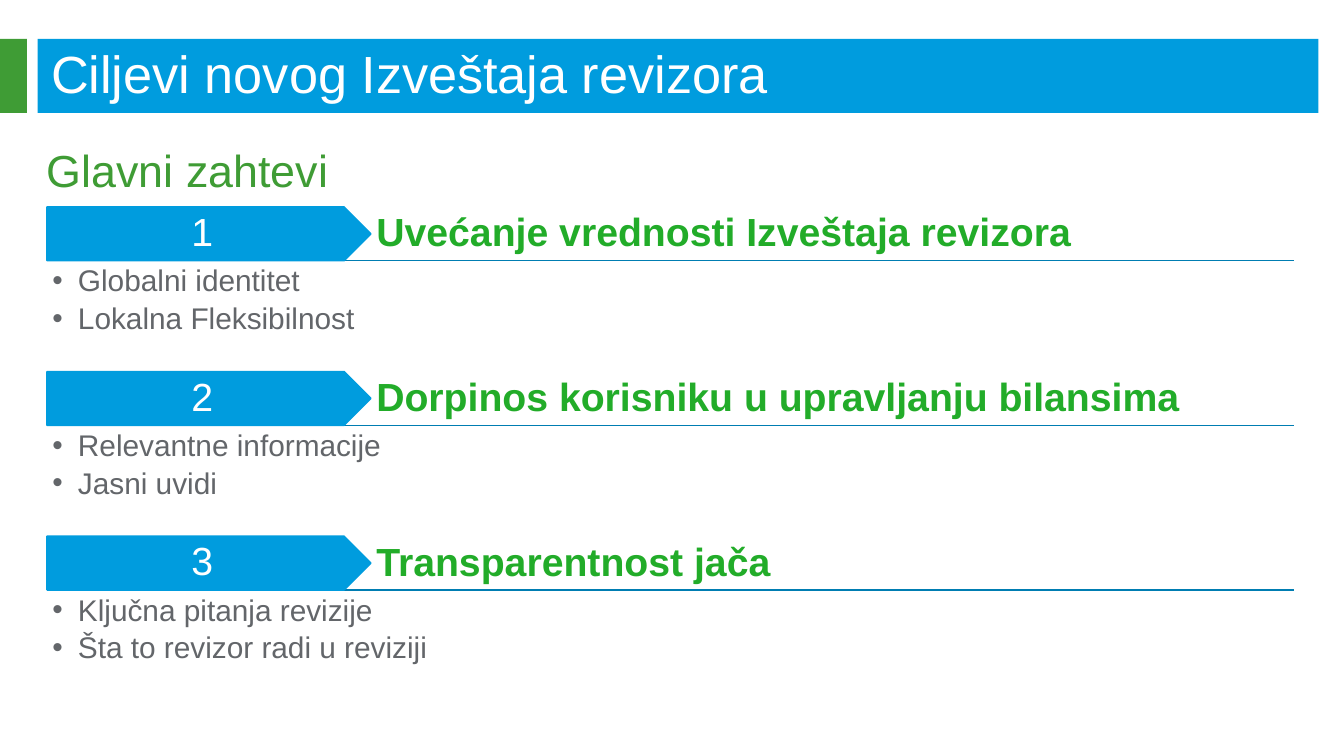
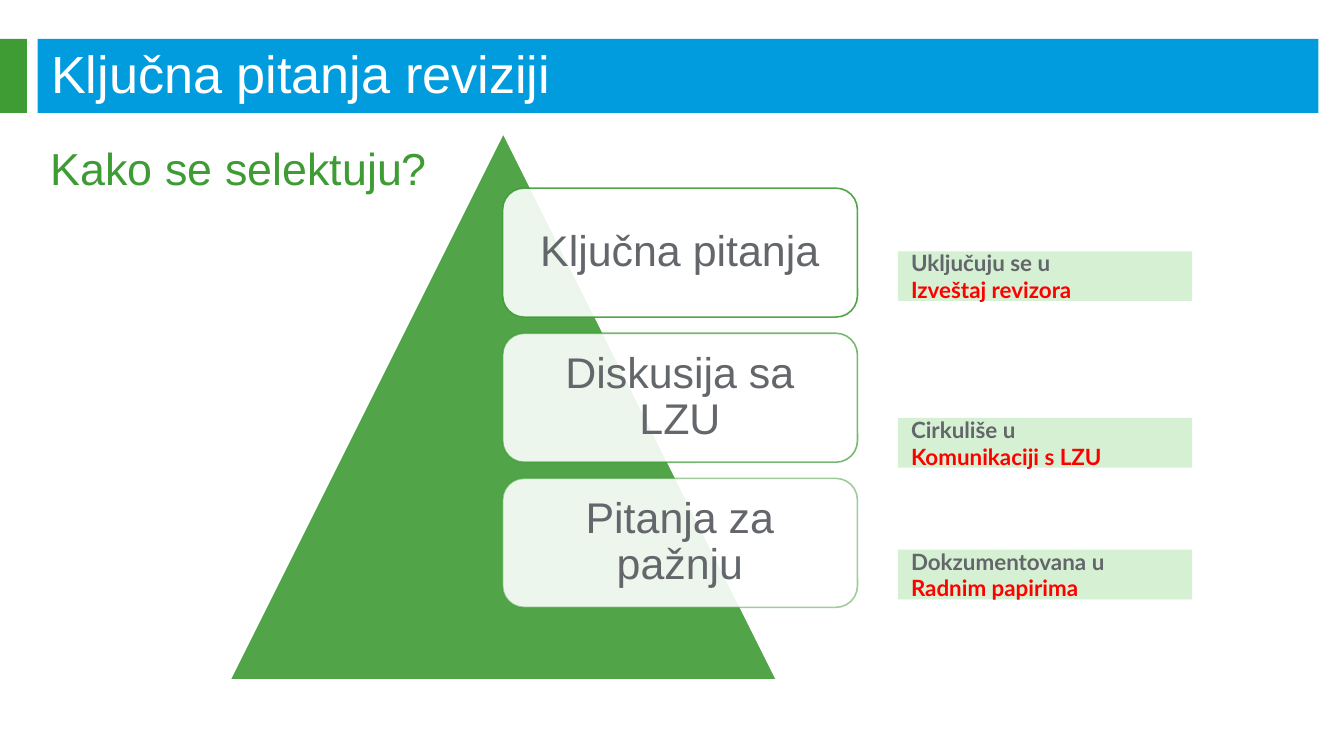
from dataclasses import dataclass

from lxml.etree import SubElement
from pptx import Presentation
from pptx.dml.color import RGBColor as Rgb
from pptx.enum.shapes import MSO_CONNECTOR as Connector, MSO_SHAPE as Preset
from pptx.enum.text import MSO_ANCHOR as Anchor, PP_ALIGN as Align
from pptx.oxml.ns import qn
from pptx.util import Inches, Pt

GOALS = {
    "title": "Ciljevi novog Izveštaja revizora",
    "subtitle": ("Glavni zahtevi", 0.25, 1.01),
    "demands": [
        ("Uvećanje vrednosti Izveštaja revizora", ["Globalni identitet", "Lokalna Fleksibilnost"]),
        ("Dorpinos korisniku u upravljanju bilansima", ["Relevantne informacije", "Jasni uvidi"]),
        ("Transparentnost jača", ["Ključna pitanja revizije", "Šta to revizor radi u reviziji"]),
    ],
}
MATTERS = {
    "title": "Ključna pitanja reviziji",
    "subtitle": ("Kako se selektuju?", 0.28, 1),
    "levels": [
        ("Ključna pitanja", 90, 1.87, ("Uključuju se u", "Izveštaj revizora")),
        ("Diskusija sa LZU", 70, 3.11, ("Cirkuliše u", "Komunikaciji s LZU")),
        ("Pitanja za pažnju", 50, 4.09, ("Dokzumentovana u", "Radnim papirima")),
    ],
}


@dataclass(frozen=True)
class Theme:
    """Colours, fonts and type sizes of the deck."""

    blue: str = "009CDE"
    rule: str = "007DB2"
    green: str = "3F9C35"
    bright: str = "22AC29"
    pale: str = "D5F0D2"
    grey: str = "63666A"
    red: str = "FF0000"
    white: str = "FFFFFF"
    sans: str = "Arial"
    note_font: str = "Lato"
    title: int = 28
    subtitle: int = 24
    level: int = 23
    demand: int = 21
    bullet: int = 16
    note: int = 12
    hairline: float = 0.85


THEME = Theme()
SLIDE_W = 10
SLIDE_H = SLIDE_W * 9 / 16
BAND = (0.28, 0.29, 9.53, 0.55)
TAB = (0, 0.29, 0.2, 0.55)
TITLE = (0.28, 0.39, 9.45, 0.3)
LEFT, RIGHT = 0.35, 9.63
FIRST_DEMAND, LAST_DEMAND = 1.54, 3.99
TAG_W, TAG_H, BULLETS_H = 2.41, 0.4, 0.8
PYRAMID = (1.71, 0.99, 4.07, 4.07)
CARD_X, CARD_Y, CARD_W, CARD_H, CARD_STEP = 3.74, 1.4, 2.64, 0.96, 1.08
NOTE_X, NOTE_W, NOTE_H = 6.68, 2.19, 0.37


def assign(target, values):
    """Set each named attribute of the target."""
    for name, value in values.items():
        setattr(target, name, value)


def set_alpha(color, percent):
    """Give a colour element an opacity."""
    SubElement(color, qn("a:alpha"), val=str(percent * 1000))


def write(shape, lines, size, color, bold=False, font=THEME.sans, align=Align.LEFT,
          anchor=Anchor.TOP, inset=None, spacing=None, bullets=False):
    """Fill a shape with formatted paragraphs, coloured alike or one by one."""
    frame = shape.text_frame
    assign(frame, {"word_wrap": True, "vertical_anchor": anchor})
    if inset is not None:
        sides = ("left", "top", "right", "bottom")
        assign(frame, {f"margin_{side}": Inches(inset) for side in sides})
    colors = color if isinstance(color, tuple) else (color,) * len(lines)
    for index, (line, tint) in enumerate(zip(lines, colors)):
        paragraph = frame.add_paragraph() if index else frame.paragraphs[0]
        if bullets:
            properties = paragraph._p.get_or_add_pPr()
            indent = Inches(0.19)
            properties.set("marL", str(indent))
            properties.set("indent", str(-indent))
            SubElement(properties, qn("a:buFont"), typeface=font)
            SubElement(properties, qn("a:buChar"), char="•")
            assign(paragraph, {"level": 1, "space_after": Pt(2.9)})
        assign(paragraph, {"alignment": align, "line_spacing": spacing})
        run = paragraph.add_run()
        run.text = line
        for target in (paragraph.font, run.font):
            assign(target, {"size": Pt(size), "name": font, "bold": bold})
            target.color.rgb = Rgb.from_string(tint)
        if bullets:
            SubElement(paragraph._p, qn("a:endParaRPr"), sz=str(size * 100))


def add_block(slide, preset, box, fill, line=None, fill_alpha=None, line_alpha=None):
    """Draw a flat preset shape."""
    shape = slide.shapes.add_shape(preset, *map(Inches, box))
    shape.shadow.inherit = False
    shape.fill.solid()
    shape.fill.fore_color.rgb = Rgb.from_string(fill)
    if line:
        shape.line.color.rgb = Rgb.from_string(line)
        shape.line.width = Pt(THEME.hairline)
    else:
        shape.line.fill.background()
    for alpha, place in ((fill_alpha, "a:solidFill"), (line_alpha, "a:ln/a:solidFill")):
        if alpha:
            set_alpha(shape.element.xpath(f"p:spPr/{place}/a:srgbClr")[0], alpha)
    return shape


def add_text(slide, box, lines, size, color, **formats):
    """Add a wrapped text box."""
    write(slide.shapes.add_textbox(*map(Inches, box)), lines, size, color, **formats)


def add_rule(slide, y):
    """Draw a thin line across the content width."""
    rule = slide.shapes.add_connector(
        Connector.STRAIGHT, *map(Inches, (LEFT, y, RIGHT, y)))
    rule.line.color.rgb = Rgb.from_string(THEME.rule)
    rule.line.width = Pt(THEME.hairline)
    SubElement(rule.element.spPr, qn("a:effectLst"))


def add_bands(slide):
    """Put the title band and its tab on the layout, behind the placeholders."""
    for box, fill in ((TAB, THEME.green), (BAND, THEME.blue)):
        band = add_block(slide, Preset.RECTANGLE, box, fill)
        slide.slide_layout.shapes.element.insert(2, band.element)


def add_slide(deck, content):
    """Start a slide with its title and subtitle."""
    slide = deck.slides.add_slide(deck.slide_layouts[5])
    title = slide.shapes.title
    assign(title, dict(zip(("left", "top", "width", "height"), map(Inches, TITLE))))
    write(title, [content["title"]], THEME.title, THEME.white, anchor=Anchor.MIDDLE)
    subtitle, x, y = content["subtitle"]
    add_text(slide, (x, y, 9.53, 0.53), [subtitle], THEME.subtitle, THEME.green)
    return slide


def draw_goals(slide, demands):
    """Draw the numbered demands with their bullets."""
    step = (LAST_DEMAND - FIRST_DEMAND) / (len(demands) - 1)
    body = {"inset": 0.04, "spacing": 0.9}
    for index, (demand, points) in enumerate(demands):
        top = FIRST_DEMAND + index * step
        base = top + TAG_H
        add_rule(slide, base)
        heading_x = LEFT + TAG_W
        add_text(slide, (heading_x, top, RIGHT - heading_x, TAG_H), [demand],
                 THEME.demand, THEME.bright, bold=True, anchor=Anchor.BOTTOM, **body)
        tag = add_block(slide, Preset.PENTAGON, (LEFT, top, TAG_W, TAG_H),
                        THEME.blue, THEME.blue)
        write(tag, [str(index + 1)], THEME.demand, THEME.white,
              align=Align.CENTER, anchor=Anchor.MIDDLE, **body)
        add_text(slide, (LEFT, base, RIGHT - LEFT, BULLETS_H), points,
                 THEME.bullet, THEME.grey, bullets=True, **body)


def draw_matters(slide, levels):
    """Draw the pyramid, its level cards and the notes beside them."""
    add_block(slide, Preset.ISOSCELES_TRIANGLE, PYRAMID, THEME.green, THEME.white, 90)
    for index, (level, opacity, note_y, note_lines) in enumerate(levels):
        card_box = (CARD_X, CARD_Y + index * CARD_STEP, CARD_W, CARD_H)
        card = add_block(slide, Preset.ROUNDED_RECTANGLE, card_box,
                         THEME.white, THEME.green, 90, opacity)
        write(card, [level], THEME.level, THEME.grey, align=Align.CENTER,
              anchor=Anchor.MIDDLE, inset=0.1, spacing=0.9)
        note = add_block(slide, Preset.RECTANGLE, (NOTE_X, note_y, NOTE_W, NOTE_H), THEME.pale)
        write(note, note_lines, THEME.note, (THEME.grey, THEME.red), bold=True,
              font=THEME.note_font, anchor=Anchor.MIDDLE)


def main():
    """Build and save the deck."""
    deck = Presentation()
    assign(deck, {"slide_width": Inches(SLIDE_W), "slide_height": Inches(SLIDE_H)})
    goals = add_slide(deck, GOALS)
    add_bands(goals)
    draw_goals(goals, GOALS["demands"])
    draw_matters(add_slide(deck, MATTERS), MATTERS["levels"])
    deck.save("out.pptx")


if __name__ == "__main__":
    main()
